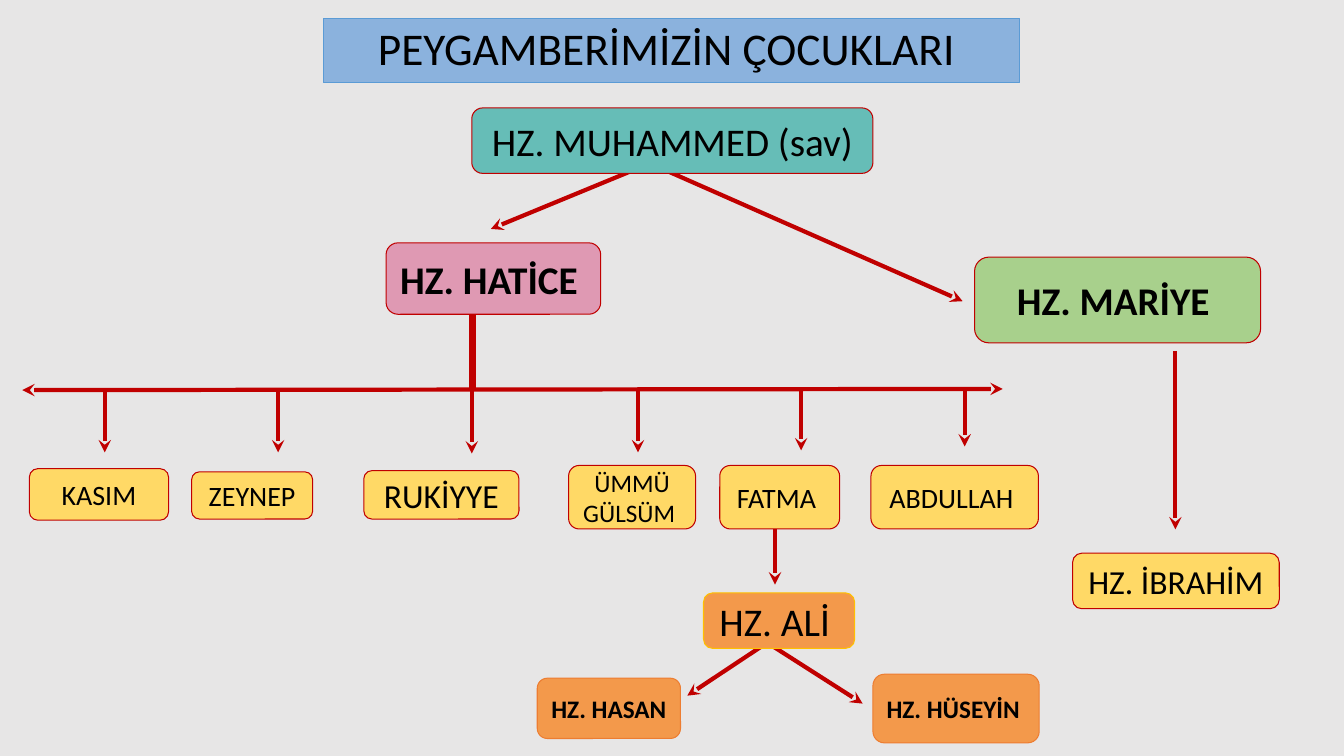
"""Build the family tree slide of the Prophet's children."""
from dataclasses import dataclass, field

from lxml.etree import SubElement
from pptx import Presentation
from pptx.dml.color import RGBColor as Rgb
from pptx.enum.shapes import MSO_CONNECTOR as Connector, MSO_SHAPE as Shape
from pptx.enum.text import MSO_ANCHOR as Anchor, PP_ALIGN as Align
from pptx.oxml.ns import qn
from pptx.slide import Slide
from pptx.util import Cm, Pt


@dataclass(frozen=True)
class Theme:
    font: str = "Calibri"
    background: str = "E7E6E6"
    text: str = "000000"
    red: str = "C00000"
    banner: str = "8BB2DD"
    banner_edge: str = "5B9BD5"
    father: str = "66BDB7"
    hatice: str = "DF99B3"
    mariye: str = "A8D08C"
    child: str = "FFD966"
    descendant: str = "F3994B"
    grandson_edge: str = "ED7D31"
    ali_edge: str = "FFC000"
    title: float = 32.4
    parent: float = 28
    large: float = 24
    medium: float = 20
    small: float = 18
    edge: float = 0.75
    branch: float = 3
    stem: float = 4.5


THEME = Theme()


@dataclass(frozen=True)
class Person:
    name: str
    place: tuple[float, float, float, float]
    fill: str = THEME.child
    size: float = THEME.medium
    bold: bool = False
    edge: str = THEME.red
    outline: Shape = Shape.ROUNDED_RECTANGLE
    spacing: float = 1.0


@dataclass(frozen=True)
class Branch:
    start: tuple[float, float]
    end: tuple[float, float]
    width: float = THEME.branch
    arrows: tuple[str, ...] = field(default=("tailEnd",))


RAIL = 9.8
CHILD_DROPS = {2.64: 11.4, 7.01: 11.4, 11.89: 11.43, 16.08: 11.4, 20.19: 11.35, 24.31: 11.25}

BRANCHES = [
    Branch((16.76, 3.96), (12.37, 5.77)),
    Branch((16.43, 4.14), (24.26, 7.59)),
    Branch((0.56, 9.83), (25.27, RAIL), arrows=("headEnd", "tailEnd")),
    *(Branch((x, RAIL), (x, bottom)) for x, bottom in CHILD_DROPS.items()),
    Branch((29.62, 8.84), (29.62, 13.34)),
    Branch((19.53, 13.34), (19.53, 14.73)),
    Branch((19.43, 16.13), (17.32, 17.53)),
    Branch((18.92, 15.93), (21.74, 17.73)),
    Branch((11.91, 7.82), (11.91, 9.83), THEME.stem, ()),
]

PEOPLE = [
    Person("PEYGAMBERİMİZİN ÇOCUKLARI ", (8.15, 0.46, 17.55, 1.63), THEME.banner, THEME.title,
           edge=THEME.banner_edge, outline=Shape.RECTANGLE, spacing=0.9),
    Person("HZ. MUHAMMED (sav)", (11.89, 2.72, 10.11, 1.65), THEME.father, THEME.parent),
    Person("HZ. HATİCE ", (9.73, 6.12, 5.41, 1.8), THEME.hatice, THEME.parent, True),
    Person("HZ. MARİYE ", (24.56, 6.48, 7.21, 2.16), THEME.mariye, THEME.parent, True),
    Person("KASIM", (0.74, 11.81, 3.51, 1.3)),
    Person("ZEYNEP", (4.83, 11.89, 3.05, 1.19)),
    Person("RUKİYYE", (9.17, 11.86, 3.91, 1.22), size=THEME.large),
    Person("ÜMMÜ GÜLSÜM ", (14.33, 11.73, 3.2, 1.6), size=THEME.small),
    Person("FATMA ", (18.14, 11.73, 3.02, 1.6)),
    Person("ABDULLAH ", (21.95, 11.73, 4.22, 1.6)),
    Person("HZ. İBRAHİM ", (27.03, 13.94, 5.21, 1.4), size=THEME.large),
    Person("HZ. ALİ ", (17.73, 14.94, 3.81, 1.4), THEME.descendant, THEME.parent,
           edge=THEME.ali_edge),
    Person("HZ. HASAN", (13.54, 17.09, 3.61, 1.52), THEME.descendant, THEME.small, True,
           THEME.grandson_edge),
    Person("HZ. HÜSEYİN ", (22, 16.99, 4.19, 1.73), THEME.descendant, THEME.small, True,
           THEME.grandson_edge),
]


def apply_format(target: object, values: dict[str, object]) -> None:
    for attribute, value in values.items():
        setattr(target, attribute, value)


def draw_branch(slide: Slide, branch: Branch) -> None:
    ends = (Cm(length) for length in (*branch.start, *branch.end))
    arrow = slide.shapes.add_connector(Connector.STRAIGHT, *ends)
    arrow.line.color.rgb = Rgb.from_string(THEME.red)
    arrow.line.width = Pt(branch.width)
    outline = arrow.line._get_or_add_ln()
    for tip in branch.arrows:
        SubElement(outline, qn(f"a:{tip}"), type="stealth")
    SubElement(arrow._element.spPr, qn("a:effectLst"))


def draw_person(slide: Slide, person: Person) -> None:
    card = slide.shapes.add_shape(person.outline, *(Cm(length) for length in person.place))
    card.shadow.inherit = False
    card.fill.solid()
    card.fill.fore_color.rgb = Rgb.from_string(person.fill)
    card.line.color.rgb = Rgb.from_string(person.edge)
    card.line.width = Pt(THEME.edge)
    label = card.text_frame
    apply_format(label, {"text": person.name, "word_wrap": True,
                         "vertical_anchor": Anchor.MIDDLE})
    line = label.paragraphs[0]
    apply_format(line, {"alignment": Align.CENTER, "line_spacing": person.spacing})
    font = line.runs[0].font
    apply_format(font, {"name": THEME.font, "size": Pt(person.size), "bold": person.bold})
    font.color.rgb = Rgb.from_string(THEME.text)


def main() -> None:
    deck = Presentation()
    apply_format(deck, {"slide_width": Cm(33.87), "slide_height": Cm(19.05)})
    slide = deck.slides.add_slide(deck.slide_layouts[6])
    slide.background.fill.solid()
    slide.background.fill.fore_color.rgb = Rgb.from_string(THEME.background)
    for branch in BRANCHES:
        draw_branch(slide, branch)
    for person in PEOPLE:
        draw_person(slide, person)
    deck.save("out.pptx")


if __name__ == "__main__":
    main()
